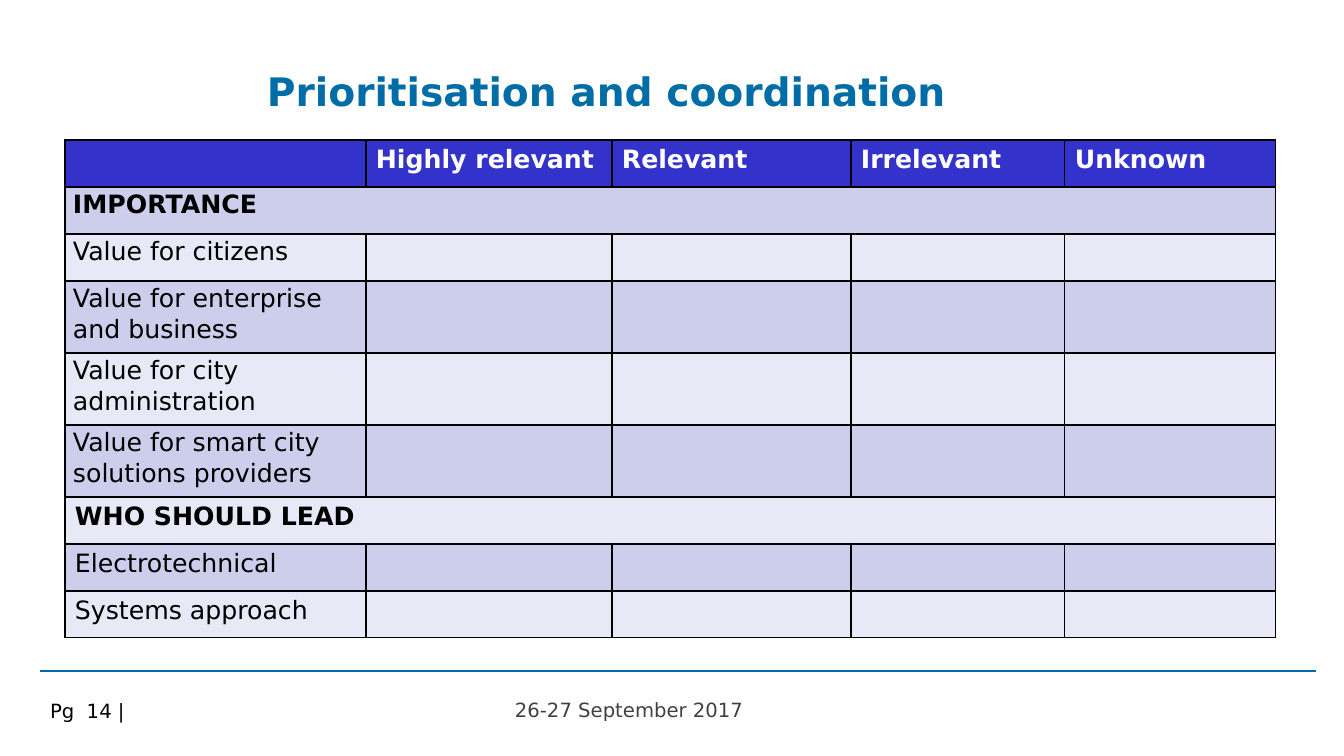
from lxml.etree import SubElement as sub_el
from pptx import Presentation
from pptx.dml.color import RGBColor
from pptx.enum.shapes import MSO_CONNECTOR as CONN
from pptx.enum.text import MSO_ANCHOR as ANCHOR, PP_ALIGN as ALIGN
from pptx.oxml import parse_xml
from pptx.oxml.ns import nsdecls, qn
from pptx.util import Pt

FONT = "DejaVu Sans"
BLUE, HEAD, DARK, PALE = "006DA7", "3333CC", "CDCDEC", "E8E8F6"
WIDE, TIGHT = (10, 5, 10, 5), (8, 1, 8, 0)

COLS = [301, 246, 239, 214, 211]
HEADS = ["", "Highly relevant", "Relevant", "Irrelevant", "Unknown"]
# Label, height, margins, line spacing, space after, section heading
ROWS = [
    ("IMPORTANCE", 47, TIGHT, 1.07, 6, True),
    ("Value for citizens", 47, TIGHT, 1.07, 6, False),
    ("Value for enterprise and business", 72, TIGHT, 1.07, 6, False),
    ("Value for city administration", 72, TIGHT, 1.07, 6, False),
    ("Value for smart city solutions providers", 72, TIGHT, 1.07, 6, False),
    ("WHO SHOULD LEAD", 47, WIDE, 1.0, 6, True),
    ("Electrotechnical", 47, WIDE, 1.0, 6, False),
    ("Systems approach", 47, WIDE, 1.0, 0, False),
]


def px(num):
    return round(num * 914400 / 100.8)


def color(code):
    return RGBColor.from_string(code)


def write(frame, text, size=18, fg="000000", bold=False, gap=1.0, after=0):
    para = frame.paragraphs[0]
    para.alignment = ALIGN.LEFT
    para.line_spacing = gap
    para.space_before, para.space_after = Pt(0), Pt(after)
    run = para.add_run()
    run.text = text
    font = run.font
    font.name, font.size, font.bold = FONT, Pt(size), bold
    font.color.rgb = color(fg)


def inset(part, sides):
    (part.margin_left, part.margin_top,
     part.margin_right, part.margin_bottom) = map(px, sides)


def place(shape, box):
    shape.left, shape.top, shape.width, shape.height = map(px, box)


def style(cell, fill, sides):
    inset(cell, sides)
    cell.vertical_anchor = ANCHOR.TOP
    cell.fill.solid()
    cell.fill.fore_color.rgb = color(fill)
    props = cell._tc.get_or_add_tcPr()
    for spot, side in enumerate("LRTB"):
        props.insert(spot, parse_xml(
            f'<a:ln{side} {nsdecls("a")} w="12700"><a:solidFill>'
            f'<a:srgbClr val="000000"/></a:solidFill></a:ln{side}>'))


def add_title(slide, box):
    title = slide.shapes.title
    place(title, box)
    frame = title.text_frame
    frame.word_wrap = True
    frame.vertical_anchor = ANCHOR.TOP
    inset(frame, (0, 2, 0, 0))
    write(frame, "Prioritisation and coordination", size=28, fg=BLUE,
          bold=True, gap=0.94)


def add_grid(slide, left, top):
    high = [47] + [row[1] for row in ROWS]
    shape = slide.shapes.add_table(
        len(high), len(COLS), px(left), px(top), px(sum(COLS)), px(sum(high)))
    table = shape.table
    for col, width in zip(table.columns, COLS):
        col.width = px(width)
    for row, size in zip(table.rows, high):
        row.height = px(size)

    # Heading row
    for spot, text in enumerate(HEADS):
        cell = table.cell(0, spot)
        style(cell, HEAD, WIDE)
        if text:
            write(cell.text_frame, text, fg="FFFFFF", bold=True)

    # Banded rows, with section headings across
    for num, (text, _, sides, gap, after, wide) in enumerate(ROWS, 1):
        for spot in range(len(COLS)):
            style(table.cell(num, spot), DARK if num % 2 else PALE, sides)
        first = table.cell(num, 0)
        if wide:
            first.merge(table.cell(num, len(COLS) - 1))
        write(first.text_frame, text, bold=wide, gap=gap, after=after)


def add_note(slide, box, text, **form):
    note = slide.shapes.add_textbox(*map(px, box))
    note.text_frame.word_wrap = True
    inset(note.text_frame, WIDE)
    write(note.text_frame, text, size=14, **form)


def add_foot(slide, left, top, width):
    rule = slide.shapes.add_connector(
        CONN.STRAIGHT, px(left), px(top), px(left + width), px(top))
    rule.line.color.rgb = color(BLUE)
    rule.line.width = Pt(0.75)
    sub_el(rule._element.spPr, qn("a:effectLst"))
    add_note(slide, (left + 465, top + 22, 389, 34), "26-27 September 2017",
             fg="404040")
    add_note(slide, (left, top + 25, 278, 39), "Pg  14 |", gap=0.93)


def main():
    deck = Presentation()
    deck.slide_width, deck.slide_height = px(1344), px(756)
    slide = deck.slides.add_slide(deck.slide_layouts[5])
    add_foot(slide, 40, 671, 1276)
    add_grid(slide, 65, 140)
    add_title(slide, (267, 69, 1009, 71))
    deck.save("out.pptx")


if __name__ == "__main__":
    main()
